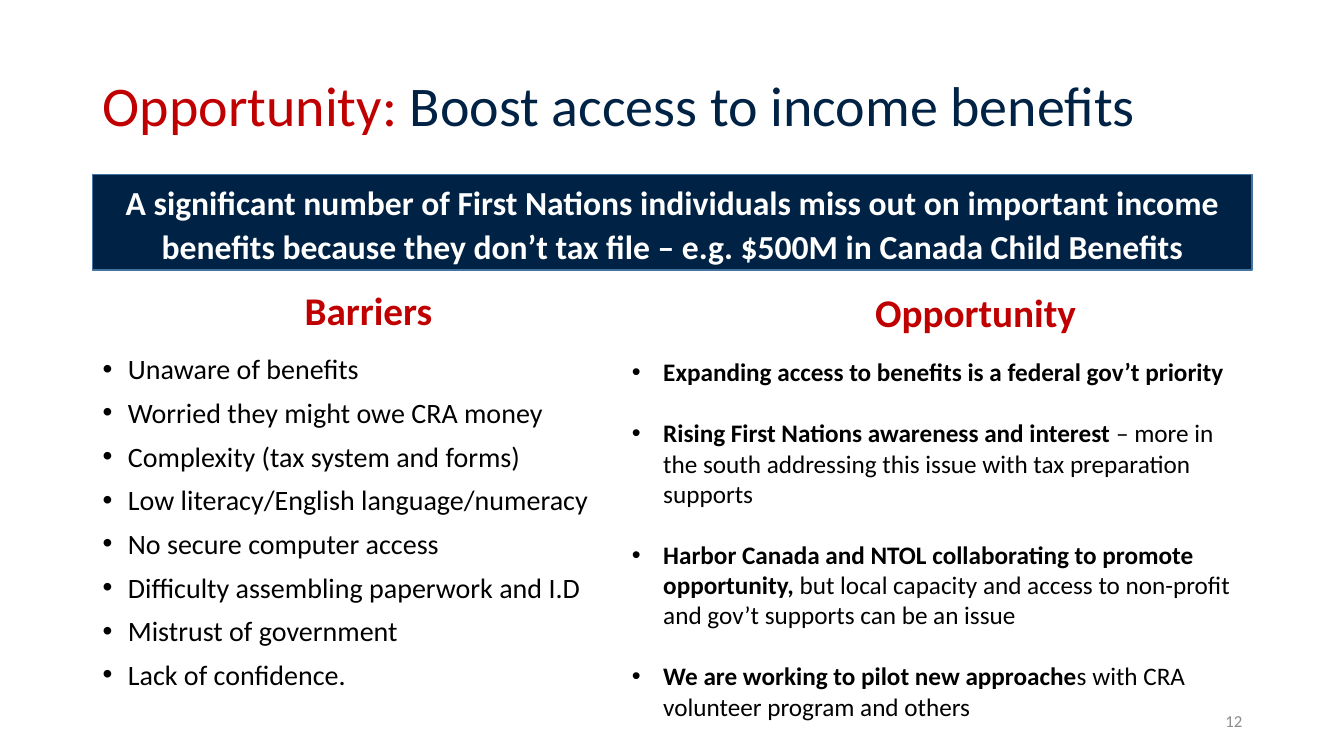
from dataclasses import dataclass

from lxml import etree
from pptx import Presentation
from pptx.dml.color import RGBColor
from pptx.enum.shapes import MSO_SHAPE as Shp
from pptx.enum.text import MSO_ANCHOR as Anchor, MSO_AUTO_SIZE as AutoSize, PP_ALIGN as Align
from pptx.oxml.ns import qn
from pptx.util import Inches, Pt

COLORS = {"red": "C00000", "navy": "002244", "edge": "43739E",
          "black": "000000", "white": "FFFFFF", "gray": "8C8C8C"}
FONT = "Calibri"


@dataclass(frozen=True)
class Box:
    left: float
    top: float
    width: float
    height: float

    def emu(self) -> tuple:
        return tuple(Inches(v) for v in (self.left, self.top, self.width, self.height))


@dataclass(frozen=True)
class Run:
    text: str
    size: float
    color: str = "black"
    bold: bool = False


@dataclass(frozen=True)
class BulletList:
    box: Box
    items: list[list[Run]]
    indent: float
    line_spacing: float = 1.0
    gap: float = 0


def add_runs(p, runs: list[Run]) -> None:
    for run in runs:
        r = p.add_run()
        r.text = run.text
        r.font.name, r.font.size, r.font.bold = FONT, Pt(run.size), run.bold
        r.font.color.rgb = RGBColor.from_string(COLORS[run.color])


def add_bullet(p, indent: float) -> None:
    pPr = p._p.get_or_add_pPr()
    pPr.set("marL", str(Inches(indent)))
    pPr.set("indent", str(-Inches(indent)))
    etree.SubElement(pPr, qn("a:buFont")).set("typeface", "Arial")
    etree.SubElement(pPr, qn("a:buChar")).set("char", "•")


def add_text(slide, box: Box, anchor=Anchor.TOP):
    tf = slide.shapes.add_textbox(*box.emu()).text_frame
    tf.word_wrap = True
    tf.vertical_anchor = anchor
    return tf


def add_list(slide, spec_list: BulletList) -> None:
    tf = add_text(slide, spec_list.box)
    for i, runs in enumerate(spec_list.items):
        p = tf.add_paragraph() if i else tf.paragraphs[0]
        p.line_spacing = spec_list.line_spacing
        p.space_before = Pt(spec_list.gap if i else 0)
        add_bullet(p, spec_list.indent)
        add_runs(p, runs)


def add_panel(slide, kind, box: Box, run: Run, line_spacing: float = 1.0):
    sp = slide.shapes.add_shape(kind, *box.emu())
    sp.shadow.inherit = False
    sp.fill.background()
    sp.line.fill.background()
    tf = sp.text_frame
    tf.word_wrap = True
    tf.vertical_anchor = Anchor.MIDDLE
    p = tf.paragraphs[0]
    p.alignment = Align.CENTER
    p.line_spacing = line_spacing
    add_runs(p, [run])
    return sp


BARRIERS = ["Unaware of benefits", "Worried they might owe CRA money",
            "Complexity (tax system and forms)", "Low literacy/English language/numeracy",
            "No secure computer access", "Difficulty assembling paperwork and I.D",
            "Mistrust of government", "Lack of confidence."]
# Bold lead and regular remainder of each point
OPPORTUNITIES = [
    ("Expanding access to benefits is a federal gov’t priority", ""),
    ("Rising First Nations awareness and interest ",
     "– more in the south addressing this issue with tax preparation supports"),
    ("Harbor Canada and NTOL collaborating to promote opportunity, ",
     "but local capacity and access to non-profit and gov’t supports can be an issue"),
    ("We are working to pilot new approache", "s with CRA volunteer program and others"),
]
LISTS = [
    BulletList(Box(0.92, 3.34, 5.47, 3.77), [[Run(t, 20)] for t in BARRIERS], 0.25, 1.3),
    BulletList(Box(6.17, 3.49, 6.24, 3.74),
               [[Run(t, 18, bold=b) for t, b in zip(pair, (True, False)) if t]
                for pair in OPPORTUNITIES], 0.31, gap=22),
]
HEADINGS = [("Barriers", Box(0.92, 2.84, 5.47, 0.46)),
            ("Opportunity", Box(6.94, 2.86, 5.47, 0.46))]


def main() -> None:
    prs = Presentation()
    prs.slide_width, prs.slide_height = Inches(13.33), Inches(7.5)
    slide = prs.slides.add_slide(prs.slide_layouts[5])

    # Title
    title = slide.shapes.title
    title.left, title.top, title.width, title.height = Box(0.92, 0.35, 11.5, 1.45).emu()
    tf = title.text_frame
    tf.auto_size = AutoSize.NONE
    tf.vertical_anchor = Anchor.MIDDLE
    p = tf.paragraphs[0]
    p.alignment = Align.LEFT
    p.line_spacing = 0.9
    add_runs(p, [Run("Opportunity: ", 40, "red"),
                 Run("Boost access to income benefits", 40, "navy")])

    # Key message banner
    message = ("A significant number of First Nations individuals miss out on important income "
               "benefits because they don’t tax file – e.g. $500M in Canada Child Benefits")
    banner = add_panel(slide, Shp.RECTANGLE, Box(0.92, 1.73, 11.5, 0.95),
                       Run(message, 24, "white", True), 1.1)
    banner.fill.solid()
    banner.fill.fore_color.rgb = RGBColor.from_string(COLORS["navy"])
    banner.line.color.rgb = RGBColor.from_string(COLORS["edge"])
    banner.line.width = Pt(1)

    # Column headings and lists
    for text, box in HEADINGS:
        add_panel(slide, Shp.ROUNDED_RECTANGLE, box, Run(text, 28, "red", True))
    for bullet_list in LISTS:
        add_list(slide, bullet_list)

    # Slide number
    p = add_text(slide, Box(9.42, 6.95, 3, 0.4), Anchor.MIDDLE).paragraphs[0]
    p.alignment = Align.RIGHT
    add_runs(p, [Run("12", 12, "gray")])

    prs.save("out.pptx")


if __name__ == "__main__":
    main()
